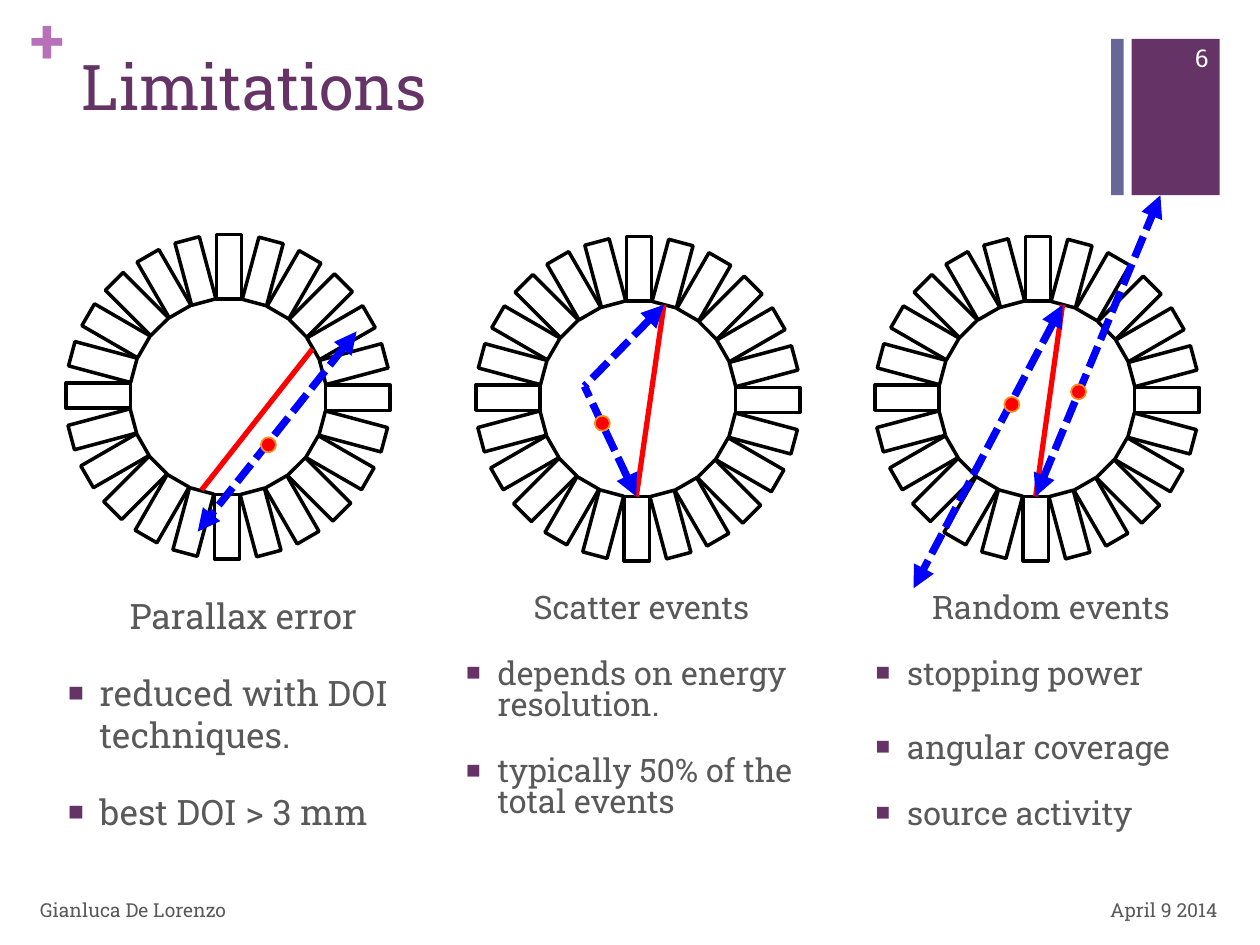
import math

from lxml import etree
from pptx import Presentation
from pptx.dml.color import RGBColor
from pptx.enum.dml import MSO_LINE
from pptx.enum.shapes import MSO_CONNECTOR, MSO_SHAPE
from pptx.enum.text import MSO_ANCHOR, MSO_AUTO_SIZE, PP_ALIGN
from pptx.oxml.ns import qn
from pptx.util import Pt

RECTANGLE, OVAL = MSO_SHAPE.RECTANGLE, MSO_SHAPE.OVAL
STRAIGHT, SHORT_DASH = MSO_CONNECTOR.STRAIGHT, MSO_LINE.SQUARE_DOT
LEFT, CENTER, RIGHT = PP_ALIGN.LEFT, PP_ALIGN.CENTER, PP_ALIGN.RIGHT
TOP, MIDDLE = MSO_ANCHOR.TOP, MSO_ANCHOR.MIDDLE
NO_AUTOFIT = MSO_AUTO_SIZE.NONE

PURPLE = RGBColor(0x66, 0x33, 0x66)
LILAC = RGBColor(0xB8, 0x70, 0xB8)
SLATE = RGBColor(0x66, 0x66, 0x99)
GRAY = RGBColor(0x59, 0x59, 0x59)
WHITE = RGBColor(0xFF, 0xFF, 0xFF)
BLACK = RGBColor(0x00, 0x00, 0x00)
RED = RGBColor(0xFF, 0x00, 0x00)
BLUE = RGBColor(0x00, 0x00, 0xFF)
ORANGE = RGBColor(0xF7, 0x90, 0x1E)

FONT = "Roboto Slab"
COMPARISON_LAYOUT = 4

DETECTOR_COUNT = 24
DETECTOR_WIDTH, DETECTOR_LENGTH = 14.4, 36.8
RING_RADIUS = 74.2
RING_TWIST = 0.5  # degrees by which the detectors run ahead of their own tilt
SOURCE_SIZE = 8.6


def format_font(font, size, color, bold=False):
    font.name, font.size, font.bold = FONT, Pt(size), bold
    font.color.rgb = color


def place(shape, left, top, width, height):
    shape.left, shape.top = Pt(left), Pt(top)
    shape.width, shape.height = Pt(width), Pt(height)


def add_filled_shape(shapes, kind, box, fill, line=None, line_width=1):
    shape = shapes.add_shape(kind, *map(Pt, box))
    shape.shadow.inherit = False
    shape.fill.solid()
    shape.fill.fore_color.rgb = fill
    if line is None:
        shape.line.fill.background()
    else:
        shape.line.color.rgb = line
        shape.line.width = Pt(line_width)
    return shape


def add_label(slide, text, box, size, color, alignment=LEFT, anchor=MIDDLE,
              bold=False, inset=None):
    label = slide.shapes.add_textbox(*map(Pt, box))
    frame = label.text_frame
    frame.word_wrap, frame.vertical_anchor = True, anchor
    if inset is not None:
        frame.margin_left = frame.margin_right = Pt(inset)
        frame.margin_top = frame.margin_bottom = Pt(inset)
    paragraph = frame.paragraphs[0]
    paragraph.text, paragraph.alignment = text, alignment
    format_font(paragraph.font, size, color, bold)


def add_line(shapes, start, end, color, width, arrows=()):
    """Draw a line; arrows names the ends ("headEnd", "tailEnd") with a triangle."""
    connector = shapes.add_connector(STRAIGHT, *map(Pt, start + end))
    connector.line.color.rgb = color
    connector.line.width = Pt(width)
    if arrows:
        connector.line.dash_style = SHORT_DASH
    properties = connector._element.spPr
    for arrow in arrows:
        etree.SubElement(properties.find(qn("a:ln")), qn("a:" + arrow), type="triangle")
    etree.SubElement(properties, qn("a:effectLst"))


def add_response_line(shapes, start, end):
    add_line(shapes, start, end, RED, 3)


def add_photon_path(shapes, start, end, arrows=("headEnd", "tailEnd")):
    add_line(shapes, start, end, BLUE, 4.25, arrows)


def add_source(shapes, x, y):
    half = SOURCE_SIZE / 2
    box = (x - half, y - half, SOURCE_SIZE, SOURCE_SIZE)
    add_filled_shape(shapes, OVAL, box, RED, ORANGE)


def add_detector_ring(slide, center_x, center_y):
    """Add a group with the ring of detectors and return the group's shapes."""
    shapes = slide.shapes.add_group_shape().shapes
    for index in range(DETECTOR_COUNT):
        tilt = -index * 360 / DETECTOR_COUNT
        angle = math.radians(tilt + RING_TWIST)
        x = center_x + RING_RADIUS * math.sin(angle)
        y = center_y - RING_RADIUS * math.cos(angle)
        box = (x - DETECTOR_WIDTH / 2, y - DETECTOR_LENGTH / 2,
               DETECTOR_WIDTH, DETECTOR_LENGTH)
        detector = add_filled_shape(shapes, RECTANGLE, box, WHITE, BLACK, 2)
        detector.rotation = tilt % 360
    return shapes


def add_parallax_diagram(slide):
    shapes = add_detector_ring(slide, 130.3, 226.7)
    add_photon_path(shapes, (203.8, 189.4), (113, 303.8))
    add_response_line(shapes, (178.5, 199.5), (115.2, 280))
    add_source(shapes, 153.4, 254.2)


def add_scatter_diagram(slide):
    shapes = add_detector_ring(slide, 364.5, 227.9)
    upper_hit, lower_hit, scatter_point = (379.4, 174.2), (363.6, 283.7), (334, 220.7)
    add_response_line(shapes, upper_hit, lower_hit)
    for hit in (upper_hit, lower_hit):
        add_photon_path(shapes, hit, scatter_point, ("headEnd",))
    add_source(shapes, 344.2, 241.9)


def add_random_diagram(slide):
    shapes = add_detector_ring(slide, 592.5, 227.9)
    upper_hit, lower_hit = (607.2, 174.2), (591.8, 283.7)
    add_response_line(shapes, upper_hit, lower_hit)
    add_photon_path(shapes, upper_hit, (522, 336.2))
    add_photon_path(shapes, lower_hit, (663.1, 111.6))
    add_source(shapes, 578.2, 231.1)
    add_source(shapes, 616.3, 223.9)


def add_bullet(properties):
    color = etree.SubElement(properties, qn("a:buClr"))
    etree.SubElement(color, qn("a:srgbClr"), val=str(PURPLE))
    etree.SubElement(properties, qn("a:buSzPct"), val="75000")
    etree.SubElement(properties, qn("a:buChar"), char="■")


def fill_column(placeholder, left, size, lines):
    """Write (text, line spacing) pairs: a centred heading, then bullets."""
    place(placeholder, left, 336.2, 214.6, 157)
    frame = placeholder.text_frame
    frame.auto_size, frame.vertical_anchor = NO_AUTOFIT, TOP
    for index, (text, spacing) in enumerate(lines):
        paragraph = frame.add_paragraph() if index else frame.paragraphs[0]
        paragraph.text = text
        paragraph.alignment = LEFT if index else CENTER
        paragraph.line_spacing = spacing
        paragraph.space_before, paragraph.space_after = Pt(20), Pt(0)
        format_font(paragraph.font, size, GRAY)
        properties = paragraph._p.get_or_add_pPr()
        properties.set("marL", str(Pt(18)))
        properties.set("indent", str(Pt(-18)))
        if index:
            add_bullet(properties)
        else:
            etree.SubElement(properties, qn("a:buNone"))


def fill_title(title, text):
    place(title, 39.6, 23.8, 594.7, 87.8)
    title.text_frame.auto_size = NO_AUTOFIT
    title.text_frame.vertical_anchor = TOP
    paragraph = title.text_frame.paragraphs[0]
    paragraph.text, paragraph.alignment = text, LEFT
    format_font(paragraph.font, 36, PURPLE)


def main():
    presentation = Presentation()
    presentation.slide_width, presentation.slide_height = Pt(720), Pt(540)
    slide = presentation.slides.add_slide(presentation.slide_layouts[COMPARISON_LAYOUT])
    title, *columns, spare = list(slide.placeholders)
    spare._element.getparent().remove(spare._element)

    add_filled_shape(slide.shapes, RECTANGLE, (646.6, 22.3, 50.4, 89.3), PURPLE)
    add_filled_shape(slide.shapes, RECTANGLE, (635, 22.3, 7.2, 89.3), SLATE)
    add_label(slide, "+", (17.3, 0, 20.9, 43.9), 36, LILAC, anchor=TOP, bold=True, inset=0)
    fill_title(title, "Limitations")

    add_parallax_diagram(slide)
    add_scatter_diagram(slide)
    add_random_diagram(slide)

    fill_column(columns[0], 31.7, 20, [
        ("Parallax error", 1.0), ("reduced with DOI techniques.", 1.0),
        ("best DOI > 3 mm", 1.0)])
    fill_column(columns[1], 259.2, 18.5, [
        ("Scatter events", 0.8), ("depends on energy resolution.", 0.8),
        ("typically 50% of the total events", 0.8)])
    fill_column(columns[2], 493.2, 18.5, [
        ("Random events", 0.8), ("stopping power", 0.8),
        ("angular coverage", 1.0), ("source activity", 0.8)])

    add_label(slide, "Gianluca De Lorenzo", (15.8, 505.4, 482.4, 28.8), 11, GRAY)
    add_label(slide, "April 9 2014", (535, 505.4, 167.8, 28.8), 11, GRAY, RIGHT)
    add_label(slide, "6", (653.8, 18.7, 43.9, 28.8), 14, WHITE, RIGHT)
    presentation.save("out.pptx")


if __name__ == "__main__":
    main()
